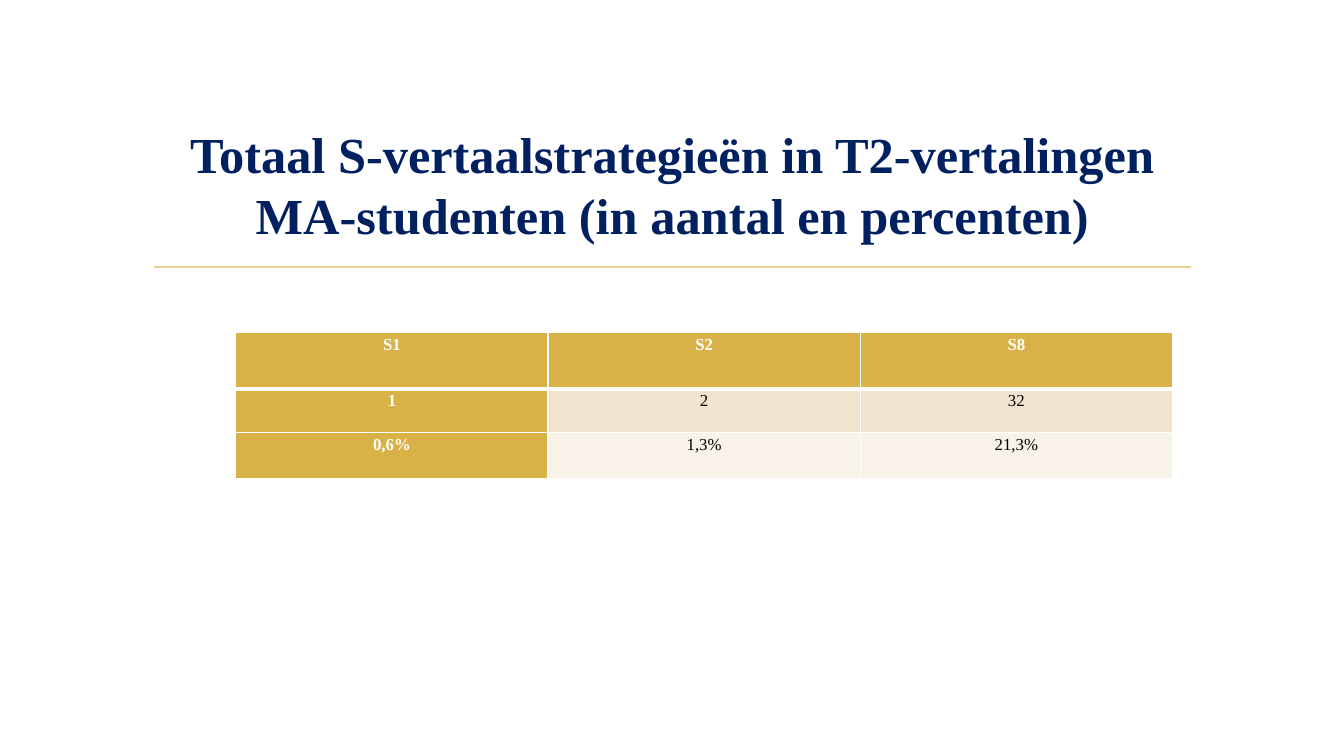
from lxml.etree import SubElement
from pptx import Presentation
from pptx.dml.color import RGBColor
from pptx.enum.shapes import MSO_CONNECTOR
from pptx.enum.text import MSO_ANCHOR, MSO_AUTO_SIZE, PP_ALIGN
from pptx.oxml.ns import qn
from pptx.util import Inches, Pt

NAVY = RGBColor(0x00, 0x20, 0x60)
GOLD = RGBColor(0xD9, 0xB2, 0x47)
LIGHT_GOLD = RGBColor(0xE8, 0xD1, 0x91)
SAND = RGBColor(0xF1, 0xE4, 0xCF)
CREAM = RGBColor(0xF8, 0xF2, 0xE9)
WHITE = RGBColor(0xFF, 0xFF, 0xFF)
BLACK = RGBColor(0x00, 0x00, 0x00)

TITLE = "Totaal S-vertaalstrategieën in T2-vertalingen MA-studenten (in aantal en percenten)"
STRATEGIES = [
    ("S1", "S2", "S8"),
    ("1", "2", "32"),
    ("0,6%", "1,3%", "21,3%"),
]
ROW_HEIGHTS = (7.47, 5.73, 6.13)
BODY_FILLS = (GOLD, SAND, CREAM)


class SlideBuilder:
    font_name = "Times New Roman"
    grid_size = 100

    def __init__(self, presentation):
        self.column = presentation.slide_width / self.grid_size
        self.row = presentation.slide_height / self.grid_size
        self.slide = presentation.slides.add_slide(presentation.slide_layouts[5])

    def across(self, columns):
        return round(columns * self.column)

    def down(self, rows):
        return round(rows * self.row)

    def add_text(self, paragraph, text, size, color, bold):
        paragraph.alignment = PP_ALIGN.CENTER
        run = paragraph.add_run()
        run.text = text
        run.font.name = self.font_name
        run.font.size = Pt(size)
        run.font.bold = bold
        run.font.color.rgb = color

    def title(self, text, left, top, width, height):
        shape = self.slide.shapes.title
        shape.left, shape.top = self.across(left), self.down(top)
        shape.width, shape.height = self.across(width), self.down(height)
        frame = shape.text_frame
        frame.word_wrap = True
        frame.auto_size = MSO_AUTO_SIZE.NONE
        frame.vertical_anchor = MSO_ANCHOR.MIDDLE
        self.add_text(frame.paragraphs[0], text, 36, NAVY, True)

    def rule(self, left, right, top):
        connector = self.slide.shapes.add_connector(
            MSO_CONNECTOR.STRAIGHT,
            self.across(left), self.down(top), self.across(right), self.down(top))
        connector.line.color.rgb = LIGHT_GOLD
        connector.line.width = Pt(1.25)
        SubElement(connector._element.spPr, qn("a:effectLst"))

    def border(self, cell, side, width):
        properties = cell._tc.get_or_add_tcPr()
        line = SubElement(properties, qn(f"a:ln{side}"), w=str(Pt(width)))
        fill = SubElement(line, qn("a:solidFill"))
        SubElement(fill, qn("a:srgbClr"), val=str(WHITE))

    def cell(self, cell, text, row_index, column_index):
        heading = row_index == 0 or column_index == 0
        cell.margin_left = cell.margin_right = Inches(0.07)
        cell.margin_top = cell.margin_bottom = 0
        widths = {"L": 1, "R": 1,
                  "T": 3 if row_index == 1 else 1,
                  "B": 3 if row_index == 0 else 1}
        for side, width in widths.items():
            self.border(cell, side, width)
        cell.fill.solid()
        cell.fill.fore_color.rgb = GOLD if heading else BODY_FILLS[row_index]
        paragraph = cell.text_frame.paragraphs[0]
        paragraph.line_spacing = 1.15
        self.add_text(paragraph, text, 12, WHITE if heading else BLACK, heading)

    def table(self, rows, heights, left, top, width):
        frame = self.slide.shapes.add_table(
            len(rows), len(rows[0]), self.across(left), self.down(top),
            self.across(width), self.down(sum(heights)))
        table = frame.table
        for row_index, (values, height) in enumerate(zip(rows, heights)):
            table.rows[row_index].height = self.down(height)
            for column_index, text in enumerate(values):
                self.cell(table.cell(row_index, column_index), text, row_index, column_index)


def main():
    presentation = Presentation()
    presentation.slide_width = Inches(13.33)
    presentation.slide_height = Inches(7.5)
    builder = SlideBuilder(presentation)
    builder.rule(left=11.48, right=88.6, top=35.33)
    builder.title(TITLE, left=10.65, top=14.8, width=78.77, height=19.07)
    builder.table(STRATEGIES, ROW_HEIGHTS, left=17.55, top=44, width=69.69)
    presentation.save("out.pptx")


if __name__ == "__main__":
    main()
